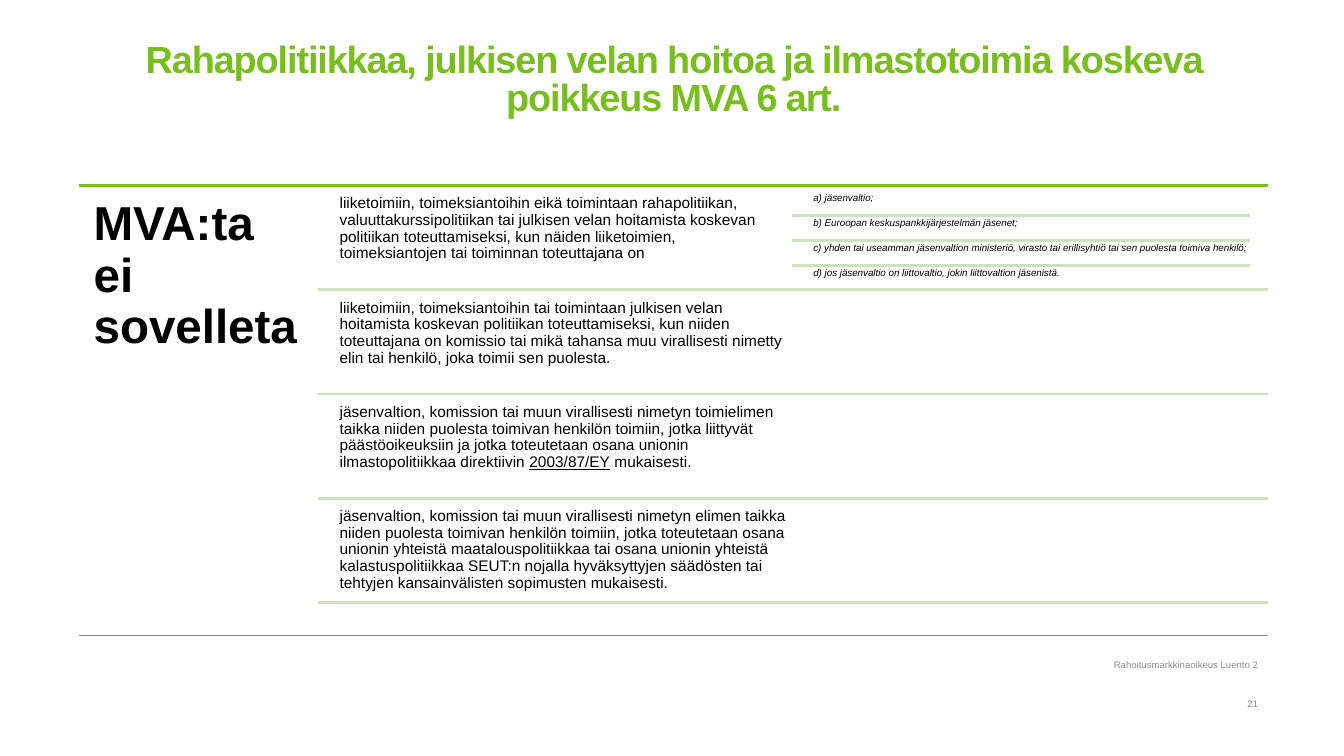
from dataclasses import dataclass

from lxml.etree import SubElement
from pptx import Presentation
from pptx.dml.color import RGBColor
from pptx.enum.shapes import MSO_CONNECTOR
from pptx.enum.text import MSO_ANCHOR, PP_ALIGN
from pptx.oxml.ns import qn
from pptx.slide import Slide
from pptx.util import Pt

GREEN = RGBColor(0x78, 0xBE, 0x20)
PALE_GREEN = RGBColor(0xCA, 0xE2, 0xBD)
GRAY = RGBColor(0x8C, 0x8C, 0x8C)
BLACK = RGBColor(0x00, 0x00, 0x00)
FONT = "Arial"

LEFT, RIGHT = 56.7, 905.7
TABLE_TOP = 132.5
ROW_HEIGHT = 74.5
ROW_GAP = 3.6
ACTOR_HEIGHT = 17.8
ROW_LEFT, ACTOR_LEFT = 239, 578.9
COLUMN_WIDTH = 326.9


@dataclass(frozen=True)
class Box:
    left: float
    top: float
    width: float
    height: float


@dataclass(frozen=True)
class Rule:
    left: float
    right: float
    top: float
    color: RGBColor = PALE_GREEN
    weight: float = 2


TITLE = "Rahapolitiikkaa, julkisen velan hoitoa ja ilmastotoimia koskeva poikkeus MVA 6 art."
DIRECTIVE = "2003/87/EY"
EXEMPTIONS = [
    "liiketoimiin, toimeksiantoihin eikä toimintaan rahapolitiikan, "
    "valuuttakurssipolitiikan tai julkisen velan hoitamista koskevan politiikan "
    "toteuttamiseksi, kun näiden liiketoimien, toimeksiantojen tai toiminnan "
    "toteuttajana on",
    "liiketoimiin, toimeksiantoihin tai toimintaan julkisen velan hoitamista koskevan "
    "politiikan toteuttamiseksi, kun niiden toteuttajana on komissio tai mikä tahansa "
    "muu virallisesti nimetty elin tai henkilö, joka toimii sen puolesta.",
    "jäsenvaltion, komission tai muun virallisesti nimetyn toimielimen taikka niiden "
    "puolesta toimivan henkilön toimiin, jotka liittyvät päästöoikeuksiin ja jotka "
    f"toteutetaan osana unionin ilmastopolitiikkaa direktiivin {DIRECTIVE} mukaisesti.",
    "jäsenvaltion, komission tai muun virallisesti nimetyn elimen taikka niiden "
    "puolesta toimivan henkilön toimiin, jotka toteutetaan osana unionin yhteistä "
    "maatalouspolitiikkaa tai osana unionin yhteistä kalastuspolitiikkaa SEUT:n nojalla "
    "hyväksyttyjen säädösten tai tehtyjen kansainvälisten sopimusten mukaisesti.",
]
ACTORS = [
    "a) jäsenvaltio;",
    "b) Euroopan keskuspankkijärjestelmän jäsenet;",
    "c) yhden tai useamman jäsenvaltion ministeriö, virasto tai erillisyhtiö tai sen "
    "puolesta toimiva henkilö;",
    "d) jos jäsenvaltio on liittovaltio, jokin liittovaltion jäsenistä.",
]
FOOTERS = {468.7: "Rahoitusmarkkinaoikeus Luento 2", 496.1: "21"}


def add_text(
    slide: Slide,
    box: Box,
    text: str,
    *,
    size: float,
    color: RGBColor = BLACK,
    bold: bool = False,
    italic: bool = False,
    underlined: str = "",
    tracking: float = 0,
    inset: float = 0,
    line_spacing: float = 0.9,
    align: PP_ALIGN = PP_ALIGN.LEFT,
    anchor: MSO_ANCHOR = MSO_ANCHOR.TOP,
) -> None:
    """Add a text box; the part of the text equal to underlined is underlined."""
    shape = slide.shapes.add_textbox(
        Pt(box.left), Pt(box.top), Pt(box.width), Pt(box.height)
    )
    frame = shape.text_frame
    frame.word_wrap = True
    frame.vertical_anchor = anchor
    frame.margin_left = frame.margin_right = Pt(inset)
    frame.margin_top = frame.margin_bottom = Pt(inset)
    paragraph = frame.paragraphs[0]
    paragraph.alignment = align
    paragraph.line_spacing = line_spacing
    before, middle, after = text.partition(underlined) if underlined else (text, "", "")
    for part in filter(None, (before, middle, after)):
        run = paragraph.add_run()
        run.text = part
        font = run.font
        font.name, font.size = FONT, Pt(size)
        font.bold, font.italic = bold, italic
        font.color.rgb = color
        if part == underlined:
            font.underline = True
        if tracking:
            run._r.get_or_add_rPr().set("spc", str(round(tracking * 100)))


def add_rule(slide: Slide, rule: Rule) -> None:
    connector = slide.shapes.add_connector(
        MSO_CONNECTOR.STRAIGHT,
        Pt(rule.left), Pt(rule.top), Pt(rule.right), Pt(rule.top),
    )
    connector.line.color.rgb = rule.color
    connector.line.width = Pt(rule.weight)
    SubElement(connector._element.spPr, qn("a:effectLst"))


def add_exemptions(slide: Slide) -> None:
    for index, text in enumerate(EXEMPTIONS):
        top = TABLE_TOP + index * ROW_HEIGHT
        box = Box(ROW_LEFT, top + ROW_GAP, COLUMN_WIDTH, ROW_HEIGHT - ROW_GAP)
        add_text(slide, box, text, size=11, inset=3.6, underlined=DIRECTIVE)
        add_rule(slide, Rule(226.8, RIGHT, top + ROW_HEIGHT))


def add_actors(slide: Slide) -> None:
    for index, text in enumerate(ACTORS):
        top = TABLE_TOP + ROW_GAP + index * ACTOR_HEIGHT
        if index:
            add_rule(slide, Rule(565.9, 892.8, top))
        box = Box(ACTOR_LEFT, top, COLUMN_WIDTH, ACTOR_HEIGHT)
        add_text(slide, box, text, size=7, italic=True, inset=2.1)


def main() -> None:
    presentation = Presentation()
    presentation.slide_width, presentation.slide_height = Pt(960), Pt(540)
    slide = presentation.slides.add_slide(presentation.slide_layouts[6])

    add_rule(slide, Rule(LEFT, RIGHT, 454.2, GRAY, 0.75))
    add_text(
        slide, Box(LEFT, 30.2, RIGHT - LEFT, 94.3), TITLE, size=27, color=GREEN,
        bold=True, tracking=-0.8, line_spacing=0.85, align=PP_ALIGN.CENTER,
    )
    add_rule(slide, Rule(LEFT, RIGHT, TABLE_TOP, GREEN))
    add_text(
        slide, Box(LEFT, TABLE_TOP, 169.9, 301.7), "MVA:ta ei sovelleta",
        size=34, bold=True, inset=10.2,
    )
    add_exemptions(slide)
    add_actors(slide)
    for top, text in FOOTERS.items():
        add_text(
            slide, Box(518.4, top, 380.2, 12.6), text, size=6.8, color=GRAY,
            line_spacing=1.0, align=PP_ALIGN.RIGHT, anchor=MSO_ANCHOR.MIDDLE,
        )
    presentation.save("out.pptx")


if __name__ == "__main__":
    main()
